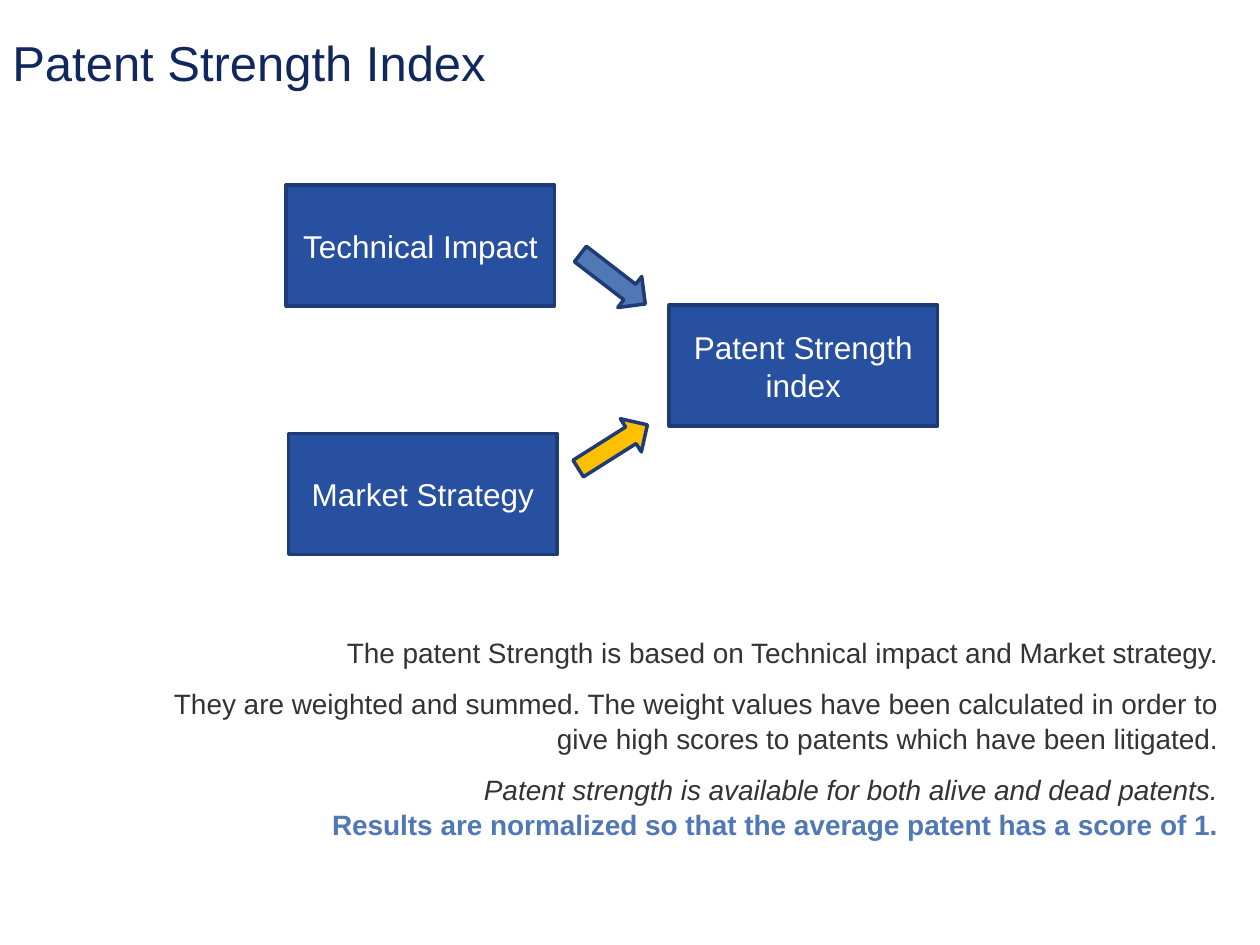
from pptx import Presentation
from pptx.dml.color import RGBColor
from pptx.enum.shapes import MSO_SHAPE as Shape
from pptx.enum.text import MSO_ANCHOR as Anchor, PP_ALIGN as Align
from pptx.util import Cm, Pt

COLORS = {
    "title": "10285D",
    "box": "2850A0",
    "outline": "1E3B76",
    "label": "FFFFFF",
    "body": "333333",
    "accent": "5078B4",
    "market": "FFC000",
}


class SlideBuilder:
    """Holds the slide and its common style."""

    font_name = "Arial"

    def __init__(self, slide):
        self.slide = slide

    def color(self, name):
        return RGBColor.from_string(COLORS[name])

    def style(self, paragraph, size, color, align=Align.LEFT, bold=False, italic=False):
        paragraph.alignment = align
        font = paragraph.font
        font.name, font.size = self.font_name, Pt(size)
        font.bold, font.italic = bold, italic
        font.color.rgb = self.color(color)

    def shape(self, kind, left, top, width, height, fill):
        shape = self.slide.shapes.add_shape(
            kind, Cm(left), Cm(top), Cm(width), Cm(height))
        shape.shadow.inherit = False
        shape.fill.solid()
        shape.fill.fore_color.rgb = self.color(fill)
        shape.line.color.rgb = self.color("outline")
        shape.line.width = Pt(2)
        return shape

    def box(self, label, left, top):
        frame = self.shape(Shape.RECTANGLE, left, top, 5.41, 2.44, "box").text_frame
        frame.word_wrap = True
        frame.vertical_anchor = Anchor.MIDDLE
        frame.text = label
        self.style(frame.paragraphs[0], 18, "label", Align.CENTER)

    def arrow(self, top, angle, fill):
        self.shape(Shape.RIGHT_ARROW, 11.53, top, 1.65, 0.79, fill).rotation = angle

    def text(self, left, top, width, height):
        frame = self.slide.shapes.add_textbox(
            Cm(left), Cm(top), Cm(width), Cm(height)).text_frame
        frame.word_wrap = True
        return frame

    def title(self, wording):
        frame = self.text(0, 0.53, 24, 3.38)
        frame.text = wording
        self.style(frame.paragraphs[0], 28, "title")

    def explanation(self, statements):
        frame = self.text(2.18, 12.65, 22.63, 5.05)
        for number, (wording, gap, look) in enumerate(statements):
            statement = frame.add_paragraph() if number else frame.paragraphs[0]
            statement.text = wording
            statement.space_before = Pt(gap)
            statement.line_spacing = 1.05
            self.style(statement, 16, align=Align.RIGHT, **look)


def main():
    deck = Presentation()
    deck.slide_width, deck.slide_height = Cm(25.4), Cm(19.05)
    builder = SlideBuilder(deck.slides.add_slide(deck.slide_layouts[6]))

    builder.title("Patent Strength Index")

    # The two inputs and the resulting index
    builder.box("Technical Impact", 5.77, 3.73)
    builder.box("Market Strategy", 5.82, 8.74)
    builder.box("Patent Strength index", 13.49, 6.15)

    # Arrows from the inputs to the index
    builder.arrow(8.61, 327.7, "market")
    builder.arrow(5.23, 37.6, "accent")

    # Explanation: wording, space before, look
    plain = {"color": "body"}
    builder.explanation([
        ("The patent Strength is based on Technical impact and Market strategy.",
         0, plain),
        ("They are weighted and summed. The weight values have been calculated "
         "in order to give high scores to patents which have been litigated.",
         9, plain),
        ("Patent strength is available for both alive and dead patents.",
         9, {"color": "body", "italic": True}),
        ("Results are normalized so that the average patent has a score of 1.",
         0, {"color": "accent", "bold": True}),
    ])

    deck.save("out.pptx")


if __name__ == "__main__":
    main()
